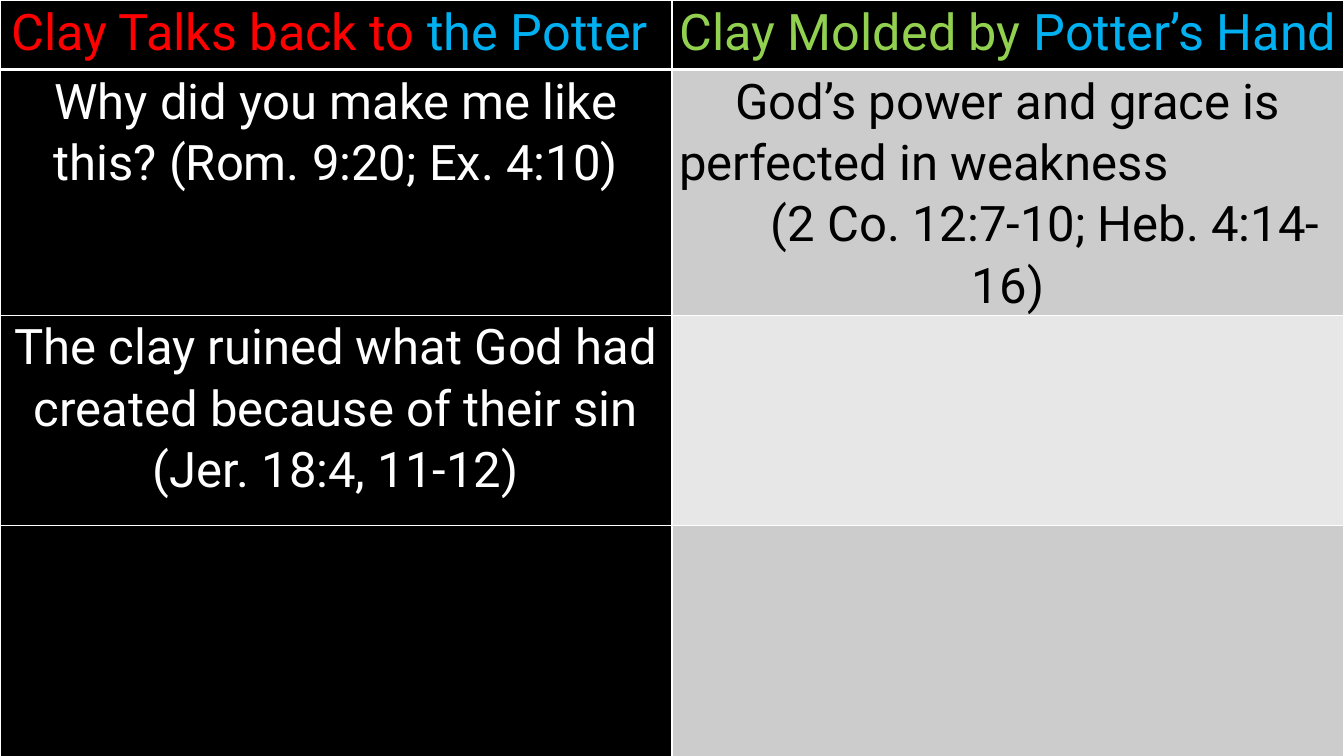
from lxml.etree import SubElement
from pptx import Presentation
from pptx.dml.color import RGBColor
from pptx.enum.text import PP_ALIGN
from pptx.oxml.ns import qn
from pptx.util import Inches, Pt

BLACK = RGBColor(0x00, 0x00, 0x00)
WHITE = RGBColor(0xFF, 0xFF, 0xFF)
RED = RGBColor(0xFF, 0x00, 0x00)
BLUE = RGBColor(0x00, 0xB0, 0xF0)
GREEN = RGBColor(0x92, 0xD0, 0x50)
GRAY = RGBColor(0xCC, 0xCC, 0xCC)
LIGHT_GRAY = RGBColor(0xE7, 0xE7, 0xE7)

SLIDE_WIDTH, SLIDE_HEIGHT = 13.33, 7.5
ROW_HEIGHTS = [0.69, 2.08, 2.08, 2.67]
HEADER_SIZE, BODY_SIZE = 36, 35

HEADERS = [
    [("Clay Talks back to ", RED), ("the Potter ", BLUE)],
    [("Clay Molded by ", GREEN), ("Potter’s Hand", BLUE)],
]
QUESTION = "Why did you make me like this? (Rom. 9:20; Ex. 4:10)"
RUIN = "The clay ruined what God had created because of their sin (Jer. 18:4, 11-12)"
GRACE = [
    ("God’s power and grace is", {}),
    ("perfected in weakness", {"align": PP_ALIGN.LEFT}),
    ("(2 Co. 12:7-10; Heb. 4:14-16)", {"indent": 0.74}),
]
ROWS = [
    [([(runs, {"size": HEADER_SIZE})], BLACK) for runs in HEADERS],
    [([(QUESTION, {"color": WHITE})], BLACK), (GRACE, GRAY)],
    [([(RUIN, {"color": WHITE})], BLACK), ([], LIGHT_GRAY)],
    [([], BLACK), ([], GRAY)],
]


def write_paragraph(paragraph, text, size=BODY_SIZE, color=BLACK,
                    align=PP_ALIGN.CENTER, indent=0):
    paragraph.alignment = align
    paragraph.line_spacing = 1.07
    if indent:
        paragraph._p.get_or_add_pPr().set("indent", str(Inches(indent)))
    runs = [(text, color)] if isinstance(text, str) else text
    for run_text, run_color in runs:
        run = paragraph.add_run()
        run.text = run_text
        run.font.name = "Roboto"
        run.font.size = Pt(size)
        run.font.color.rgb = run_color


def add_borders(cell, widths):
    properties = cell._tc.get_or_add_tcPr()
    for position, (side, width) in enumerate(widths.items()):
        line = SubElement(properties, qn(f"a:ln{side}"), w=str(Pt(width)))
        fill = SubElement(line, qn("a:solidFill"))
        SubElement(fill, qn("a:srgbClr"), val=str(WHITE))
        properties.insert(position, line)


def main():
    presentation = Presentation()
    presentation.slide_width = Inches(SLIDE_WIDTH)
    presentation.slide_height = Inches(SLIDE_HEIGHT)
    slide = presentation.slides.add_slide(presentation.slide_layouts[6])
    slide.background.fill.solid()
    slide.background.fill.fore_color.rgb = BLACK

    table = slide.shapes.add_table(
        len(ROWS), len(HEADERS), 0, 0,
        Inches(SLIDE_WIDTH), Inches(sum(ROW_HEIGHTS))).table
    table.first_row = False
    table.horz_banding = False

    for row_index, (height, row) in enumerate(zip(ROW_HEIGHTS, ROWS)):
        table.rows[row_index].height = Inches(height)
        borders = {"L": 1, "R": 1,
                   "T": 3 if row_index == 1 else 1,
                   "B": 3 if row_index == 0 else 1}
        for column_index, (paragraphs, fill_color) in enumerate(row):
            cell = table.cell(row_index, column_index)
            cell.margin_left = cell.margin_right = Inches(0.07)
            cell.margin_top = cell.margin_bottom = 0
            cell.fill.solid()
            cell.fill.fore_color.rgb = fill_color
            add_borders(cell, borders)
            frame = cell.text_frame
            for index, (text, style) in enumerate(paragraphs):
                paragraph = frame.add_paragraph() if index else frame.paragraphs[0]
                write_paragraph(paragraph, text, **style)

    presentation.save("out.pptx")


if __name__ == "__main__":
    main()
